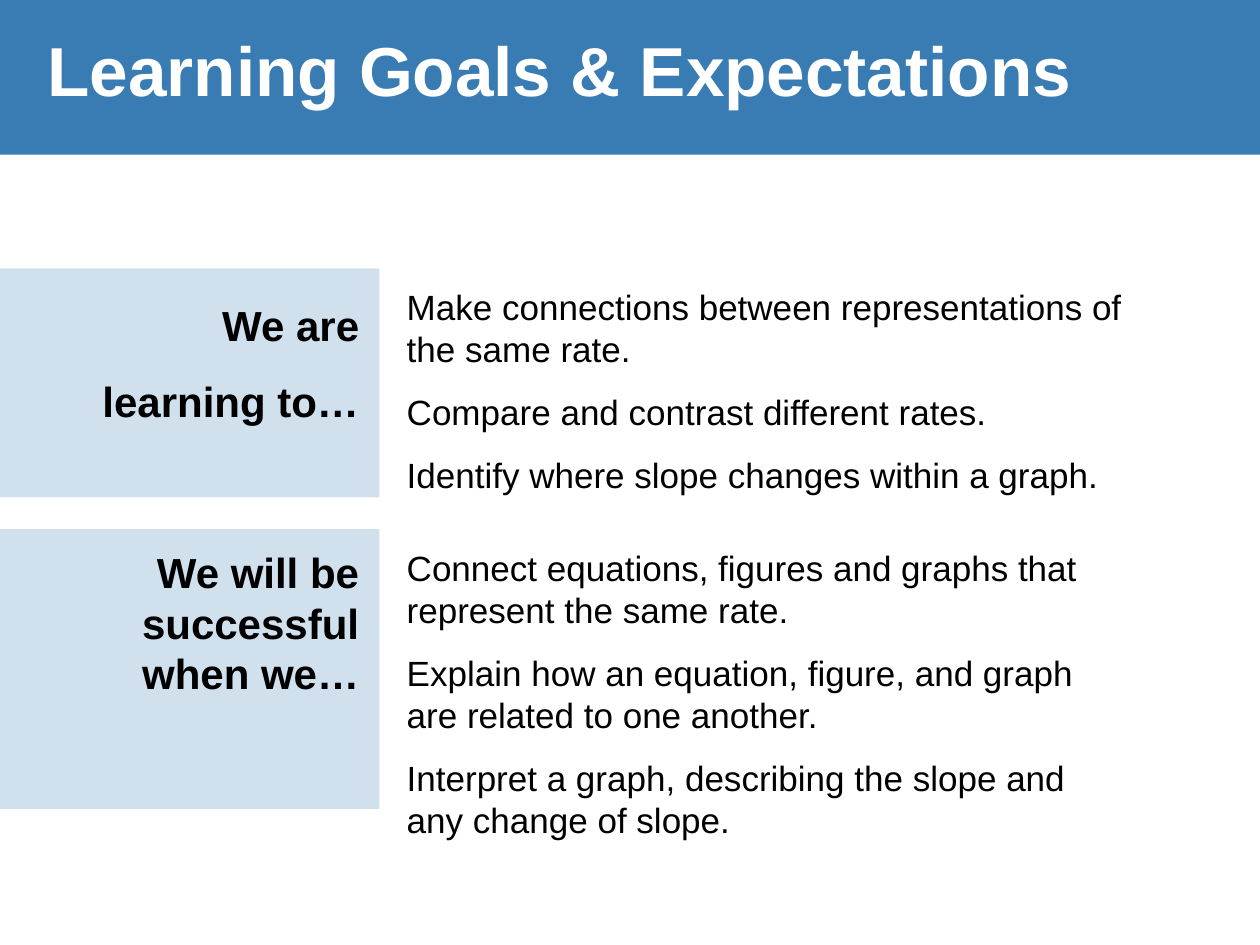
import pptx
import pptx.dml.color
import pptx.enum.shapes
import pptx.enum.text
import pptx.oxml.ns
import pptx.util
from lxml import etree
from pptx.util import Cm

# Content
TITLE = "Learning Goals & Expectations"
SECTIONS = [
    {
        "label": "We are learning to…",
        "goals": [
            "Make connections between representations of the same rate.",
            "Compare and contrast different rates.",
            "Identify where slope changes within a graph.",
        ],
        "panel": (5.41, 4.62),  # top, height
        "label_at": (1.07, 5.41),  # left, top
        "spacing": 1.5,
    },
    {
        "label": "We will be successful when we…",
        "goals": [
            "Connect equations, figures and graphs that represent the same rate.",
            "Explain how an equation, figure, and graph are related to one another.",
            "Interpret a graph, describing the slope and any change of slope.",
        ],
        "panel": (10.67, 5.64),
        "label_at": (2.03, 10.9),
        "spacing": 1.0,
    },
]
BLUE, WHITE, BLACK = "397CB3", "FFFFFF", "000000"
PANEL_WIDTH, LABEL_RIGHT = 7.65, 7.49
GOALS_LEFT, GOALS_OFFSET = 7.95, 0.23
ALIGN = pptx.enum.text.PP_ALIGN
ANCHOR = pptx.enum.text.MSO_ANCHOR


def color(value):
    return pptx.dml.color.RGBColor.from_string(value)


def add_block(page, left, top, width, height, opacity=100):
    block = page.shapes.add_shape(
        pptx.enum.shapes.MSO_SHAPE.RECTANGLE, Cm(left), Cm(top), Cm(width), Cm(height))
    block.shadow.inherit = False
    block.line.fill.background()
    block.fill.solid()
    block.fill.fore_color.rgb = color(BLUE)
    if opacity < 100:
        shade = block.fill._xPr.find(".//" + pptx.oxml.ns.qn("a:srgbClr"))
        etree.SubElement(shade, pptx.oxml.ns.qn("a:alpha"), val=str(opacity * 1000))


def add_text(page, lines, left, top, width, height, size=20, bold=False, ink=BLACK,
             align=ALIGN.LEFT, anchor=ANCHOR.TOP, spacing=1.0, before=0, after=0):
    box = page.shapes.add_textbox(Cm(left), Cm(top), Cm(width), Cm(height))
    frame = box.text_frame
    frame.word_wrap = True
    frame.vertical_anchor = anchor
    for number, line in enumerate(lines):
        para = frame.add_paragraph() if number else frame.paragraphs[0]
        para.alignment = align
        para.line_spacing = spacing
        para.space_before = pptx.util.Pt(before)
        para.space_after = pptx.util.Pt(after)
        span = para.add_run()
        span.text = line
        span.font.name = "Arial"
        span.font.size = pptx.util.Pt(size)
        span.font.bold = bold
        span.font.color.rgb = color(ink)


deck = pptx.Presentation()
deck.slide_width, deck.slide_height = Cm(25.4), Cm(19.05)
page = deck.slides.add_slide(deck.slide_layouts[6])

# Title band
add_block(page, 0, 0, 25.4, 3.12)
add_text(page, [TITLE], 0.71, 0, 22.86, 2.79, size=39.6, bold=True, ink=WHITE,
         anchor=ANCHOR.MIDDLE)

# Sections: tinted panel, label and goals
for section in SECTIONS:
    panel_top, panel_height = section["panel"]
    label_left, label_top = section["label_at"]
    add_block(page, 0, panel_top, PANEL_WIDTH, panel_height, opacity=23)
    add_text(page, [section["label"]], label_left, label_top, LABEL_RIGHT - label_left, 2.57,
             size=24, bold=True, align=ALIGN.RIGHT, spacing=section["spacing"], before=4.8)
    add_text(page, section["goals"], GOALS_LEFT, panel_top + GOALS_OFFSET, 15.11, 5.03, after=12)

deck.save("out.pptx")
